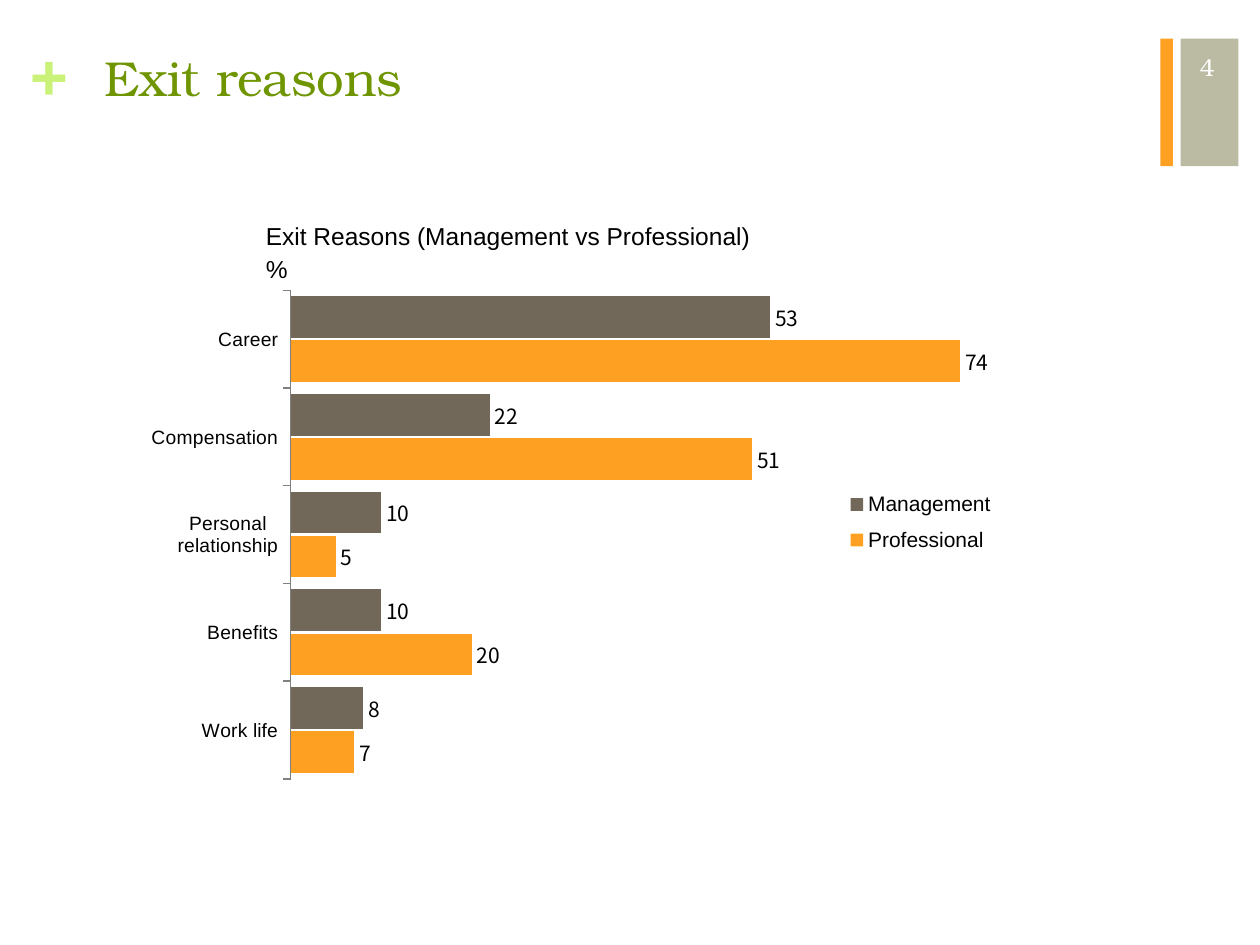
from lxml.etree import SubElement
from pptx import Presentation
from pptx.chart.data import CategoryChartData
from pptx.dml.color import RGBColor
from pptx.enum.chart import XL_CHART_TYPE, XL_LABEL_POSITION, XL_LEGEND_POSITION, XL_TICK_MARK
from pptx.enum.shapes import MSO_SHAPE
from pptx.enum.text import MSO_ANCHOR, MSO_AUTO_SIZE, PP_ALIGN
from pptx.oxml.ns import qn
from pptx.util import Inches, Pt

WIDTH, HEIGHT = 10, 7.5
COLORS = {"sand": "BBBAA2", "orange": "FEA022", "lime": "CAF278", "green": "6F9500",
          "brown": "71685A", "axis": "808080", "black": "000000", "white": "FFFFFF"}
SERIF, SANS, LABEL = "TeX Gyre Bonum", "Arial", "Noto Sans CJK SC"


def color(name):
    return RGBColor.from_string(COLORS[name])


class SlideBuilder:
    """Holds the style and the current slide; boxes are shares of the slide's size."""

    def __init__(self, deck):
        deck.slide_width, deck.slide_height = Inches(WIDTH), Inches(HEIGHT)
        self.page = deck.slides.add_slide(deck.slide_layouts[5])

    def area(self, left, top, width, height):
        return (Inches(left * WIDTH), Inches(top * HEIGHT),
                Inches(width * WIDTH), Inches(height * HEIGHT))

    def font(self, font, face, size, tint, bold=False):
        font.name, font.size, font.bold = face, Pt(size), bold
        font.color.rgb = color(tint)

    def bar(self, share, tint):
        box = self.page.shapes.add_shape(MSO_SHAPE.RECTANGLE, *self.area(*share))
        box.shadow.inherit = False
        box.fill.solid()
        box.fill.fore_color.rgb = color(tint)
        box.line.fill.background()

    def fill_text(self, box, lines, face, size, tint, bold=False, align=PP_ALIGN.LEFT,
                  anchor=MSO_ANCHOR.TOP, spacing=1.0, wrap=True, insets=(0.1, 0.05, 0.1, 0.05)):
        frame = box.text_frame
        frame.word_wrap, frame.vertical_anchor = wrap, anchor
        frame.auto_size = MSO_AUTO_SIZE.NONE if wrap else MSO_AUTO_SIZE.SHAPE_TO_FIT_TEXT
        frame.margin_left, frame.margin_top, frame.margin_right, frame.margin_bottom = map(Inches, insets)
        for index, line in enumerate(lines):
            para = frame.add_paragraph() if index else frame.paragraphs[0]
            para.alignment, para.line_spacing = align, spacing
            span = para.add_run()
            span.text = line
            self.font(span.font, face, size, tint, bold)

    def title(self, share, text):
        box = self.page.shapes.title
        box.left, box.top, box.width, box.height = self.area(*share)
        self.fill_text(box, [text], SERIF, 28, "green")

    def text(self, share, lines, *style, **options):
        self.fill_text(self.page.shapes.add_textbox(*self.area(*share)), lines, *style, **options)

    def place(self, holder, shares, inner=False):
        layout = holder.find(qn("c:layout"))
        if layout is None:
            layout = holder.makeelement(qn("c:layout"))
            holder.insert(1 if holder.tag == qn("c:legend") else 0, layout)
        manual = SubElement(layout, qn("c:manualLayout"))
        entries = [("layoutTarget", "inner")] if inner else []
        entries += [("xMode", "edge"), ("yMode", "edge"), *zip("xywh", shares)]
        for tag, value in entries:
            SubElement(manual, qn(f"c:{tag}")).set("val", str(value))

    def bar_chart(self, share, categories, series, plot_share, legend_share, maximum):
        data = CategoryChartData()
        data.categories = categories
        for name, values, _ in series:
            data.add_series(name, values)
        chart = self.page.shapes.add_chart(
            XL_CHART_TYPE.BAR_CLUSTERED, *self.area(*share), data).chart
        self.font(chart.font, LABEL, 12, "black")
        chart.has_title = False

        plot = chart.plots[0]
        plot.gap_width, plot.overlap, plot.vary_by_categories = 29, -6, False
        for item, (_, _, tint) in zip(plot.series, series):
            item.format.fill.solid()
            item.format.fill.fore_color.rgb = color(tint)
            labels = item.data_labels
            labels.show_value, labels.position = True, XL_LABEL_POSITION.OUTSIDE_END
            self.font(labels.font, LABEL, 12, "black")

        names, scale = chart.category_axis, chart.value_axis
        names.major_tick_mark, names.minor_tick_mark = XL_TICK_MARK.OUTSIDE, XL_TICK_MARK.NONE
        names.format.line.color.rgb = color("axis")
        self.font(names.tick_labels.font, SANS, 11, "black")
        scale.minimum_scale, scale.maximum_scale = 0, maximum
        scale.has_major_gridlines = scale.visible = False

        chart.has_legend = True
        legend = chart.legend
        legend.position, legend.include_in_layout = XL_LEGEND_POSITION.RIGHT, False
        self.font(legend.font, SANS, 12, "black")
        root = chart.plots[0].series[0].format.fill and chart.element
        self.place(root.find(f".//{qn('c:plotArea')}"), plot_share, inner=True)
        self.place(root.find(f".//{qn('c:legend')}"), legend_share)


def main():
    deck = Presentation()
    slide = SlideBuilder(deck)
    slide.bar((0.937, 0.041, 0.046, 0.135), "sand")
    slide.bar((0.921, 0.041, 0.01, 0.135), "orange")
    slide.text((0.024, 0.033, 0.029, 0.081), ["+"], SERIF, 36, "lime",
               bold=True, insets=(0, 0, 0, 0))
    slide.title((0.073, 0.044, 0.808, 0.105), "Exit reasons")
    slide.bar_chart(
        (0.115, 0.277, 0.821, 0.593),
        ["Work life", "Benefits", "Personal relationship", "Compensation", "Career"],
        [("Professional", (7, 20, 5, 51, 74), "orange"),
         ("Management", (8, 10, 10, 22, 53), "brown")],
        plot_share=(0.141, 0.051, 0.7, 0.872), legend_share=(0.67, 0.39, 0.16, 0.15), maximum=80)
    slide.text((0.211, 0.231, 0.387, 0.075), ["Exit Reasons (Management vs Professional)", "%"],
               SANS, 14, "black", spacing=1.1, wrap=False, insets=(0, 0, 0, 0.05))
    slide.text((0.929, 0.044, 0.045, 0.053), ["4"], SERIF, 14, "white",
               align=PP_ALIGN.RIGHT, anchor=MSO_ANCHOR.MIDDLE)
    deck.save("out.pptx")


if __name__ == "__main__":
    main()
